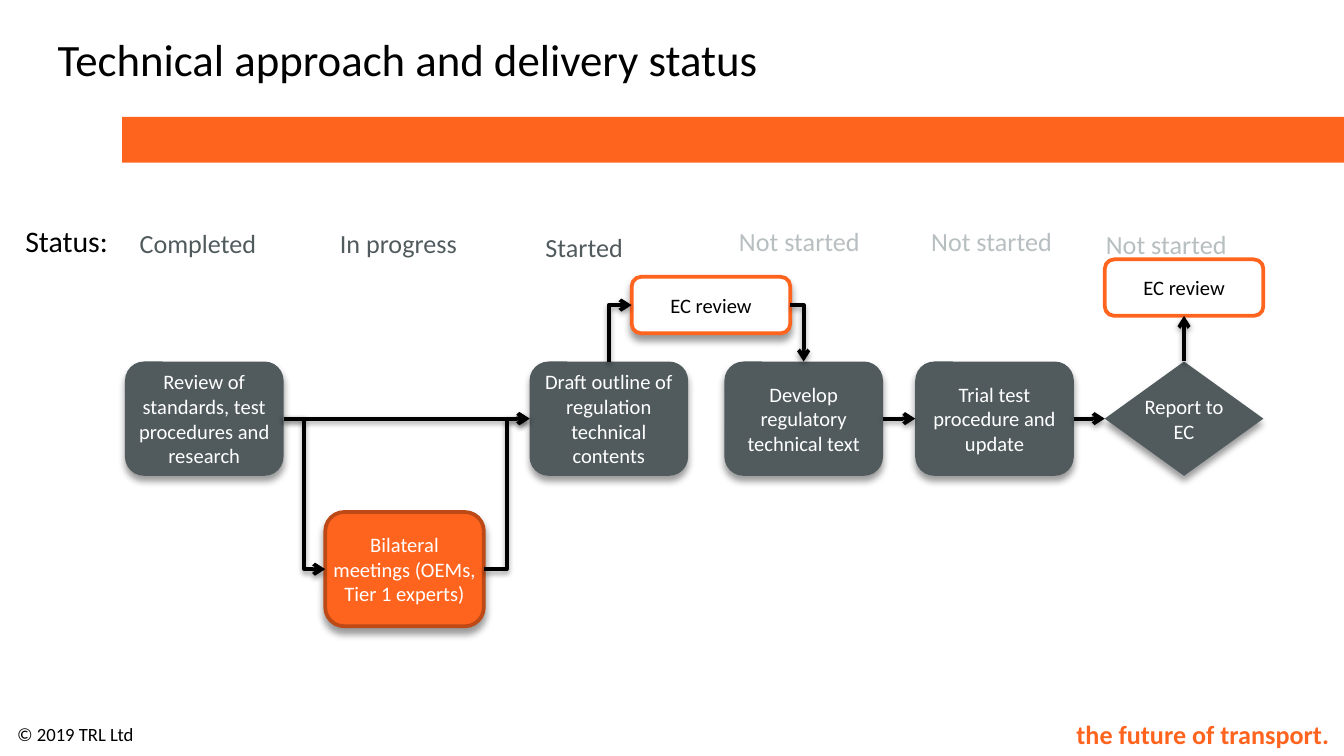
from dataclasses import dataclass

from lxml import etree
from pptx import Presentation
from pptx.dml.color import RGBColor
from pptx.enum import shapes, text
from pptx.oxml import ns
from pptx.util import Inches, Pt


@dataclass(frozen=True)
class Theme:
    font: str = "Calibri"
    orange: str = "FF641E"
    rust: str = "BD4A16"
    slate: str = "515B5E"
    pale: str = "B7BFC1"
    black: str = "000000"
    white: str = "FFFFFF"
    title: int = 24
    heading: int = 16
    label: int = 14
    step: int = 11
    small: int = 10
    line: int = 2


THEME = Theme()
SHAPE = shapes.MSO_SHAPE
ALIGN = text.PP_ALIGN
TOP, LEFT, BOTTOM, RIGHT = range(4)  # connection sites

PAGE_WIDTH = 10
PAGE_HEIGHT = PAGE_WIDTH * 9 / 16
STEP_WIDTH, STEP_HEIGHT, REVIEW_HEIGHT = 1.18, 0.85, 0.42
STEP_TOP = 2.69


def color(value):
    return RGBColor.from_string(value)


def write(frame, words, size, ink, align=ALIGN.LEFT, bold=False):
    para = frame.paragraphs[0]
    para.text = words
    para.alignment = align
    para.font.name = THEME.font
    para.font.size = Pt(size)
    para.font.bold = bold
    para.font.color.rgb = color(ink)


def add_text(slide, words, left, top, width, height, size, ink,
             wrap=True, middle=False, **style):
    box = slide.shapes.add_textbox(*map(Inches, (left, top, width, height)))
    box.text_frame.word_wrap = wrap
    if middle:
        box.text_frame.vertical_anchor = text.MSO_ANCHOR.MIDDLE
    write(box.text_frame, words, size, ink, **style)


def add_shadow(shape, alpha, blur, distance):
    """Cast a soft black shadow straight down; blur and distance in points."""
    effects = etree.SubElement(shape.element.spPr, ns.qn("a:effectLst"))
    shadow = etree.SubElement(effects, ns.qn("a:outerShdw"), blurRad=str(Pt(blur)),
                              dist=str(Pt(distance)), dir="5400000", rotWithShape="0")
    ink = etree.SubElement(shadow, ns.qn("a:srgbClr"), val=THEME.black)
    etree.SubElement(ink, ns.qn("a:alpha"), val=str(alpha * 1000))


def add_block(slide, kind, left, top, width, height, fill, outline=None):
    block = slide.shapes.add_shape(kind, *map(Inches, (left, top, width, height)))
    block.fill.solid()
    block.fill.fore_color.rgb = color(fill)
    if outline:
        block.line.color.rgb = color(outline)
        block.line.width = Pt(THEME.line)
    else:
        block.line.fill.background()
    return block


def add_step(slide, words, left, top=STEP_TOP, height=STEP_HEIGHT, kind=SHAPE.ROUNDED_RECTANGLE,
             fill=THEME.slate, outline=None, ink=THEME.white, shadow=True):
    step = add_block(slide, kind, left, top, STEP_WIDTH, height, fill, outline)
    if shadow:
        add_shadow(step, 40, 4, 3)
    else:
        step.shadow.inherit = False
    frame = step.text_frame
    frame.word_wrap = True
    frame.vertical_anchor = text.MSO_ANCHOR.MIDDLE
    frame.margin_left = frame.margin_right = frame.margin_top = frame.margin_bottom = 0
    write(frame, words, THEME.step, ink, ALIGN.CENTER)
    return step


def add_review(slide, left, top, shadow):
    return add_step(slide, "EC review", left, top, REVIEW_HEIGHT, fill=THEME.white,
                    outline=THEME.orange, ink=THEME.black, shadow=shadow)


def add_arrow(slide, start, start_side, end, end_side, preset="line", arrow="tailEnd"):
    kind = shapes.MSO_CONNECTOR.STRAIGHT if preset == "line" else shapes.MSO_CONNECTOR.ELBOW
    connector = slide.shapes.add_connector(kind, 0, 0, 0, 0)
    connector.begin_connect(start, start_side)
    connector.end_connect(end, end_side)
    connector.element.spPr.find(ns.qn("a:prstGeom")).set("prst", preset)
    connector.line.color.rgb = color(THEME.black)
    connector.line.width = Pt(THEME.line)
    line = connector.element.spPr.find(ns.qn("a:ln"))
    etree.SubElement(line, ns.qn(f"a:{arrow}"), type="arrow")
    add_shadow(connector, 38, 3.1, 1.6)


def add_frame(slide):
    add_text(slide, "the future of transport.", 7.81, 5.3, 2.18, 0.34,
             THEME.label, THEME.orange, align=ALIGN.RIGHT, bold=True)
    add_text(slide, "© 2019 TRL Ltd", 0.03, 5.33, 1.64, 0.27,
             THEME.small, THEME.black, middle=True)
    bar = add_block(slide, SHAPE.RECTANGLE, 0.91, 0.87, 9.1, 0.34, THEME.orange)
    bar.shadow.inherit = False
    add_text(slide, "Technical approach and delivery status", 0.33, 0.1, 7.46, 0.67,
             THEME.title, THEME.black, middle=True)


def add_flow(slide):
    # Steps
    meetings = add_step(slide, "Bilateral meetings (OEMs, Tier 1 experts)", 2.42, 3.81,
                        fill=THEME.orange, outline=THEME.rust)
    research = add_step(slide, "Review of standards, test procedures and research", 0.93)
    draft = add_step(slide, "Draft outline of regulation technical contents", 3.94)
    develop = add_step(slide, "Develop regulatory technical text", 5.39)
    trial = add_step(slide, "Trial test procedure and update", 6.81)
    report = add_step(slide, "Report to EC", 8.22, kind=SHAPE.DIAMOND)
    draft_review = add_review(slide, 4.7, 2.06, shadow=True)
    final_review = add_review(slide, 8.22, 1.93, shadow=False)

    # Straight arrows
    for start, end in ((research, draft), (develop, trial), (trial, report)):
        add_arrow(slide, start, RIGHT, end, LEFT)
    add_arrow(slide, report, TOP, final_review, BOTTOM)

    # Detours through the meetings and the first review
    add_arrow(slide, research, RIGHT, meetings, LEFT, "bentConnector3")
    add_arrow(slide, meetings, RIGHT, draft, LEFT, "bentConnector3")
    add_arrow(slide, draft_review, LEFT, draft, TOP, "bentConnector2", "headEnd")
    add_arrow(slide, draft_review, RIGHT, develop, TOP, "bentConnector2")


def add_statuses(slide):
    add_text(slide, "Status:", 0.09, 1.61, 0.82, 0.37, THEME.heading, THEME.black, wrap=False)
    for words, left, top, width, ink in (
        ("Completed", 0.94, 1.64, 1.08, THEME.slate),
        ("In progress", 2.43, 1.64, 1.08, THEME.slate),
        ("Started", 3.96, 1.67, 0.78, THEME.slate),
        ("Not started", 5.4, 1.63, 1.11, THEME.pale),
        ("Not started", 6.83, 1.63, 1.11, THEME.pale),
        ("Not started", 8.13, 1.65, 1.11, THEME.pale),
    ):
        add_text(slide, words, left, top, width, 0.34, THEME.label, ink, wrap=False)


def main():
    deck = Presentation()
    deck.slide_width, deck.slide_height = Inches(PAGE_WIDTH), Inches(PAGE_HEIGHT)
    page = deck.slides.add_slide(deck.slide_layouts[6])
    add_frame(page)
    add_flow(page)
    add_statuses(page)
    deck.save("out.pptx")


if __name__ == "__main__":
    main()
